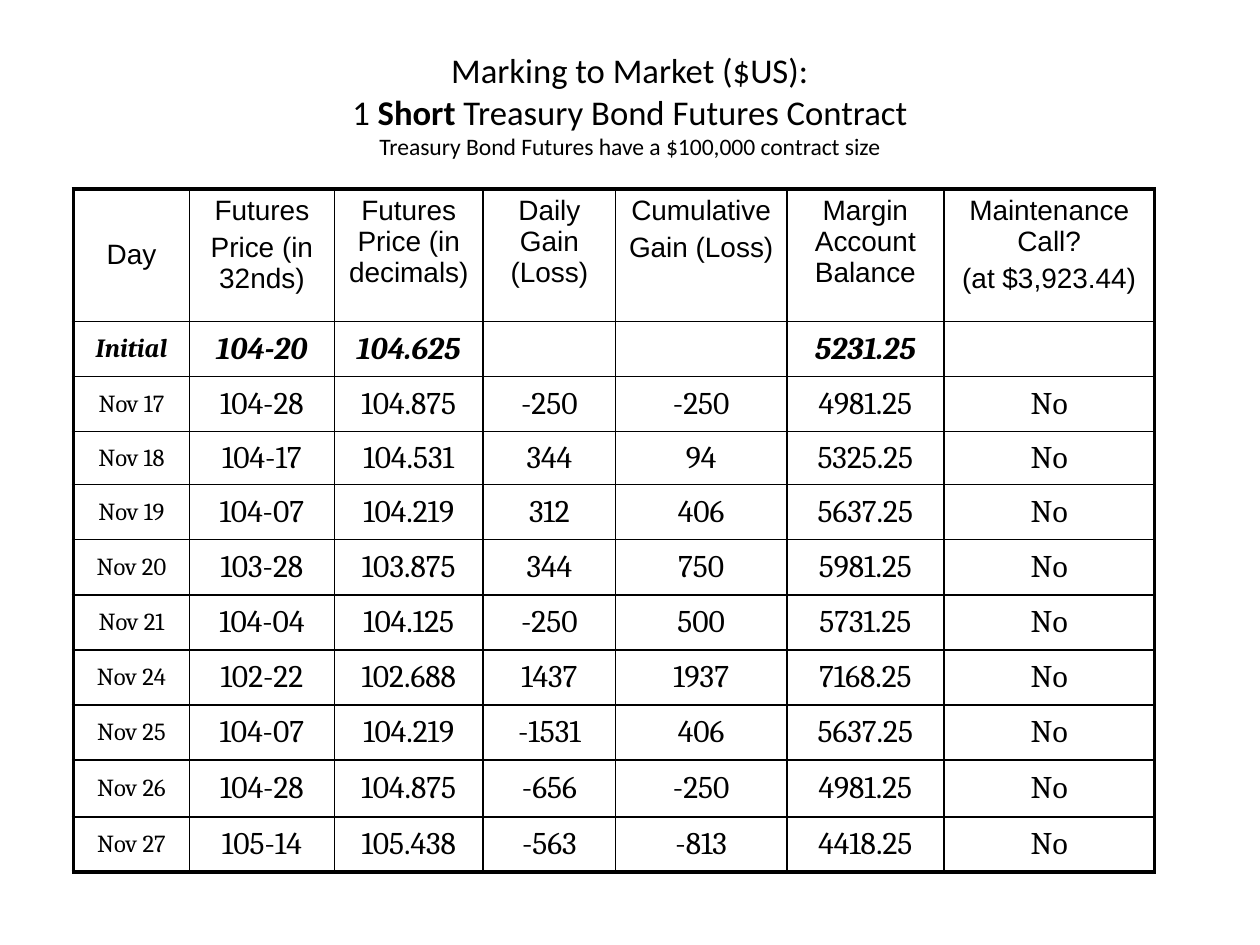
import copy

import lxml.etree
import pptx
import pptx.dml.color
import pptx.enum.text
import pptx.oxml.ns
import pptx.util

Cm = pptx.util.Cm
Pt = pptx.util.Pt
qn = pptx.oxml.ns.qn

BLACK = "000000"
THICK, THIN = 2.25, 1
COLUMN_WIDTHS = [2.34, 2.92, 3, 2.67, 3.45, 3.17, 4.24]
ROW_HEIGHTS = [2.67, 1.11, 1.11, 1.07] + [1.11] * 5 + [1.15, 1.11]
HEADINGS = [
    "Day",
    "Futures\nPrice (in 32nds)",
    "Futures Price (in decimals)",
    "Daily Gain (Loss)",
    "Cumulative\nGain (Loss)",
    "Margin Account Balance",
    "Maintenance Call?\n(at $3,923.44)",
]
TRADING_DAYS = [
    ["Initial", "104-20", "104.625", "", "", "5231.25", ""],
    ["Nov 17", "104-28", "104.875", "-250", "-250", "4981.25", "No"],
    ["Nov 18", "104-17", "104.531", "344", "94", "5325.25", "No"],
    ["Nov 19", "104-07", "104.219", "312", "406", "5637.25", "No"],
    ["Nov 20", "103-28", "103.875", "344", "750", "5981.25", "No"],
    ["Nov 21", "104-04", "104.125", "-250", "500", "5731.25", "No"],
    ["Nov 24", "102-22", "102.688", "1437", "1937", "7168.25", "No"],
    ["Nov 25", "104-07", "104.219", "-1531", "406", "5637.25", "No"],
    ["Nov 26", "104-28", "104.875", "-656", "-250", "4981.25", "No"],
    ["Nov 27", "105-14", "105.438", "-563", "-813", "4418.25", "No"],
]


def color(hex_value):
    return pptx.dml.color.RGBColor.from_string(hex_value)


def write(paragraph, text, size, font, bold=False, italic=False, ink=BLACK):
    paragraph.alignment = pptx.enum.text.PP_ALIGN.CENTER
    lines = text.split("\n")
    for number, line in enumerate(lines):
        if number:
            paragraph.add_line_break()
            paragraph._p[-1].append(copy.deepcopy(run._r.rPr))
        if line:
            run = paragraph.add_run()
            run.text = line
            run.font.size = Pt(size)
            run.font.name = font
            run.font.bold = bold
            run.font.italic = italic
            run.font.color.rgb = color(ink)


def space_before(paragraph, percent):
    spacing = lxml.etree.SubElement(paragraph._p.get_or_add_pPr(), qn("a:spcBef"))
    lxml.etree.SubElement(spacing, qn("a:spcPct"), val=str(percent * 1000))


def draw_borders(cell, left, right, top, bottom):
    properties = cell._tc.get_or_add_tcPr()
    for side, width in zip("LRTB", (left, right, top, bottom)):
        line = lxml.etree.SubElement(properties, qn(f"a:ln{side}"), w=str(Pt(width)))
        fill = lxml.etree.SubElement(line, qn("a:solidFill"))
        lxml.etree.SubElement(fill, qn("a:srgbClr"), val=BLACK)


def place_title(slide, left, top, width, height):
    title = slide.shapes.title
    title.left, title.top, title.width, title.height = map(Cm, (left, top, width, height))
    frame = title.text_frame
    frame.word_wrap = True
    frame.auto_size = pptx.enum.text.MSO_AUTO_SIZE.NONE
    frame.vertical_anchor = pptx.enum.text.MSO_ANCHOR.MIDDLE
    heading = frame.paragraphs[0]
    write(heading, "Marking to Market ($US):\n1 ", 19.8, "Calibri")
    write(heading, "Short", 19.8, "Calibri", bold=True)
    write(heading, " Treasury Bond Futures Contract\n", 19.8, "Calibri")
    write(heading, "Treasury Bond Futures have a $100,000 contract size", 13.5, "Calibri")


def cell_format(row, column):
    if row == 0:
        return {"size": 16, "font": "Arial"}
    initial = row == 1
    day_size = 15 if initial else 14
    return {
        "size": day_size if column == 0 else 18,
        "font": "Cambria",
        "bold": initial,
        "italic": initial,
    }


def place_margin_table(slide, left, top, width, height):
    rows = [HEADINGS] + TRADING_DAYS
    last_row, last_column = len(rows) - 1, len(HEADINGS) - 1
    table = slide.shapes.add_table(
        len(rows), len(HEADINGS), Cm(left), Cm(top), Cm(width), Cm(height)
    ).table
    table.first_row = False
    table.horz_banding = False
    for column, column_width in zip(table.columns, COLUMN_WIDTHS):
        column.width = Cm(column_width)
    for row, row_height in zip(table.rows, ROW_HEIGHTS):
        row.height = Cm(row_height)

    for r, values in enumerate(rows):
        for c, value in enumerate(values):
            cell = table.cell(r, c)
            draw_borders(
                cell,
                left=THICK if c == 0 else THIN,
                right=THICK if c == last_column else THIN,
                top=THICK if r == 0 else THIN,
                bottom=THICK if r == last_row else THIN,
            )
            cell.fill.background()
            if r or c == 0:
                cell.vertical_anchor = pptx.enum.text.MSO_ANCHOR.MIDDLE
            frame = cell.text_frame
            for number, text in enumerate(value.split("\n")):
                paragraph = frame.add_paragraph() if number else frame.paragraphs[0]
                space_before(paragraph, 20)
                write(paragraph, text, **cell_format(r, c))


def main():
    presentation = pptx.Presentation()
    presentation.slide_width = Cm(25.4)
    presentation.slide_height = Cm(19.05)
    slide = presentation.slides.add_slide(presentation.slide_layouts[5])
    place_title(slide, 1.9, 0.84, 21.59, 2.54)
    place_margin_table(slide, 1.48, 3.81, sum(COLUMN_WIDTHS), sum(ROW_HEIGHTS))
    presentation.save("out.pptx")


if __name__ == "__main__":
    main()
